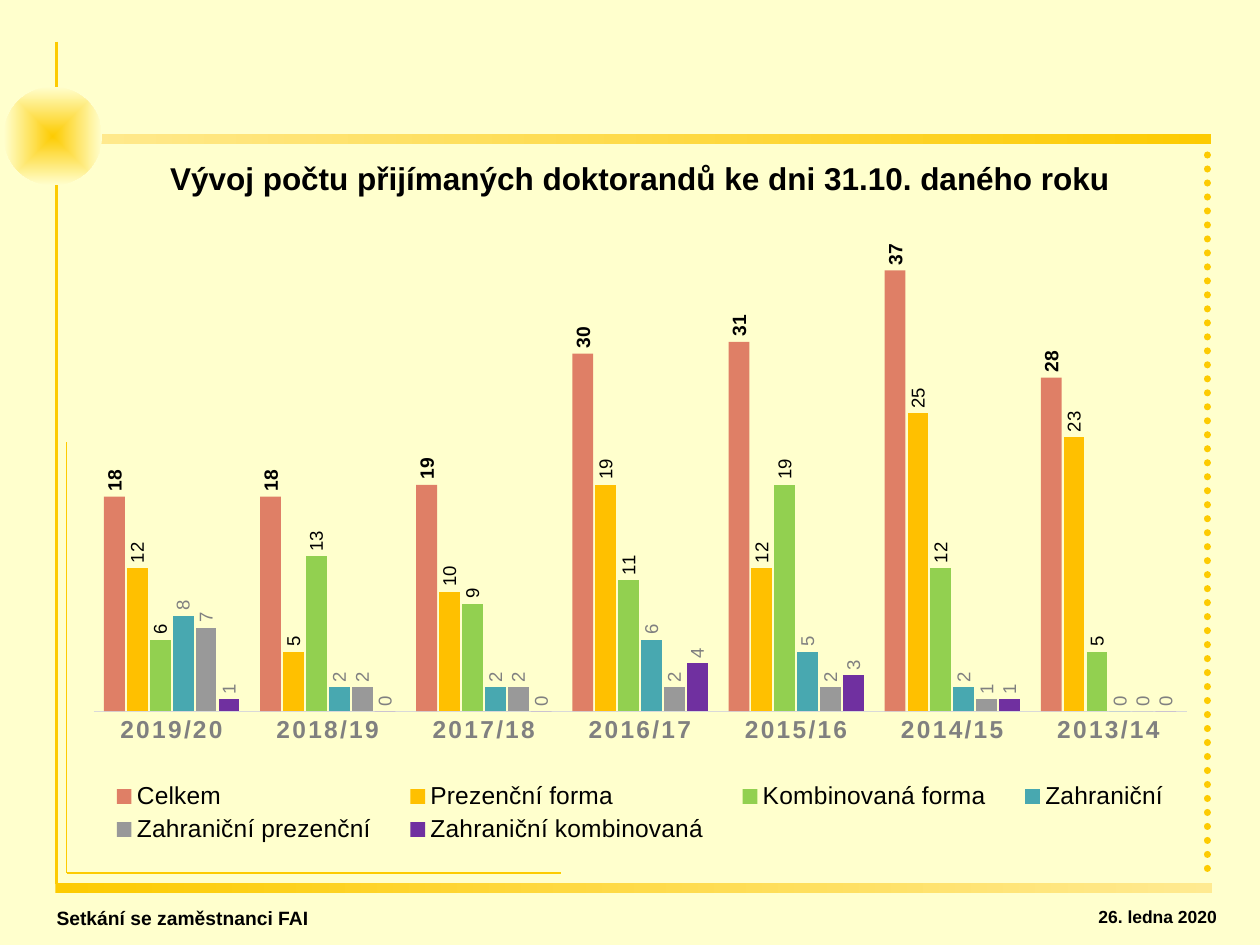
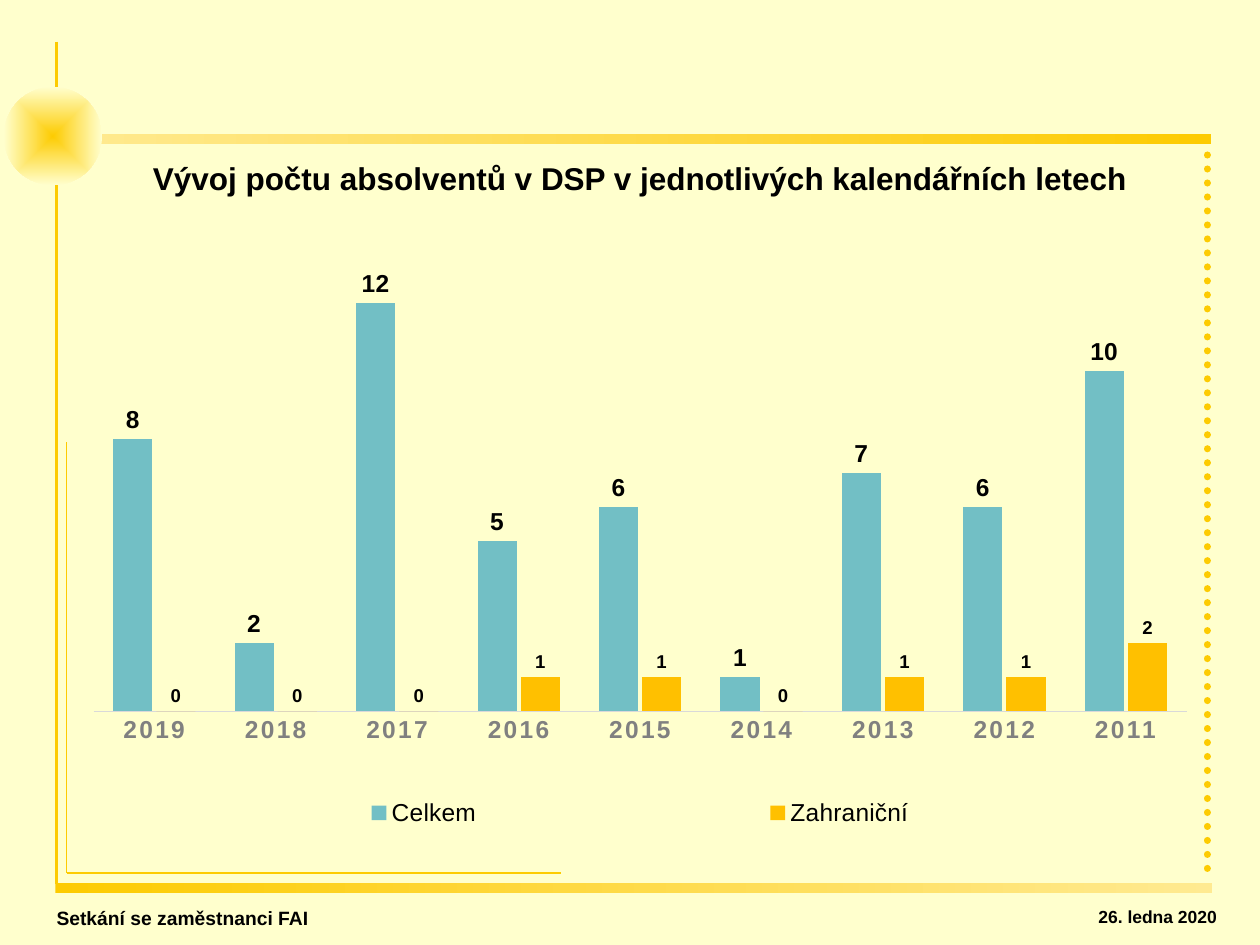
from dataclasses import dataclass

from lxml.etree import SubElement
from pptx import Presentation
from pptx.chart.data import CategoryChartData
from pptx.dml.color import RGBColor
from pptx.enum.chart import XL_CHART_TYPE, XL_LABEL_POSITION, XL_LEGEND_POSITION, XL_TICK_MARK
from pptx.enum.dml import MSO_LINE
from pptx.enum.shapes import MSO_CONNECTOR, MSO_SHAPE
from pptx.enum.text import MSO_ANCHOR, PP_ALIGN
from pptx.oxml import parse_xml
from pptx.oxml.ns import nsdecls, qn
from pptx.util import Inches, Pt


@dataclass(frozen=True)
class Theme:
    font: str = "Arial"
    background: str = "FFFFCD"
    gold: str = "FDCB01"
    pale_gold: str = "FFEA91"
    text: str = "000000"
    muted: str = "808080"
    axis: str = "D9D9D9"
    red: str = "C00000"
    amber: str = "FFC000"
    green: str = "92D050"
    teal: str = "48A8B0"
    light_teal: str = "72BFC5"
    gray: str = "999999"
    purple: str = "7030A0"
    title_size: float = 18
    chart_size: float = 14
    total_label_size: float = 11
    label_size: float = 10.6
    footer_size: float = 11
    date_size: float = 10


THEME = Theme()


@dataclass(frozen=True)
class Series:
    name: str
    values: tuple
    color: str
    opacity: int = 100
    label_size: float = THEME.label_size
    label_color: str = THEME.text
    label_bold: bool = False


def rgb(color):
    return RGBColor.from_string(color)


def format_font(font, size, color=THEME.text, bold=False):
    font.name = THEME.font
    font.size = Pt(size)
    font.bold = bold
    font.color.rgb = rgb(color)


def write_text(shape, text, size, color=THEME.text, bold=True,
               align=PP_ALIGN.LEFT, anchor=MSO_ANCHOR.TOP):
    frame = shape.text_frame
    frame.word_wrap = True
    frame.vertical_anchor = anchor
    frame.text = text
    paragraph = frame.paragraphs[0]
    paragraph.alignment = align
    format_font(paragraph.runs[0].font, size, color, bold)


def add_text(slide, text, left, top, width, height, **text_format):
    box = slide.shapes.add_textbox(Inches(left), Inches(top), Inches(width), Inches(height))
    write_text(box, text, **text_format)


def add_title(slide, text):
    title = slide.shapes.title
    title.left, title.top = Inches(0.59), Inches(1.21)
    title.width, title.height = Inches(8.98), Inches(0.4)
    write_text(title, text, THEME.title_size, align=PP_ALIGN.CENTER, anchor=MSO_ANCHOR.MIDDLE)


def add_gradient_shape(slide, kind, left, top, width, height, start, end, from_center=False):
    shape = slide.shapes.add_shape(kind, Inches(left), Inches(top), Inches(width), Inches(height))
    shape.shadow.inherit = False
    shape.line.fill.background()
    shape.fill.gradient()
    shape.fill.gradient_angle = 0
    for stop, color in zip(shape.fill.gradient_stops, (start, end)):
        stop.color.rgb = rgb(color)
    if from_center:
        linear = shape.element.spPr.find(f".//{qn('a:lin')}")
        path = parse_xml(
            f'<a:path {nsdecls("a")} path="shape">'
            '<a:fillToRect l="50000" t="50000" r="50000" b="50000"/></a:path>'
        )
        linear.getparent().replace(linear, path)


def add_line(slide, x1, y1, x2, y2, width, dotted=False):
    line = slide.shapes.add_connector(
        MSO_CONNECTOR.STRAIGHT, Inches(x1), Inches(y1), Inches(x2), Inches(y2)
    )
    line.line.color.rgb = rgb(THEME.gold)
    line.line.width = Pt(width)
    properties = line.element.spPr
    if dotted:
        line.line.dash_style = MSO_LINE.ROUND_DOT
        properties.find(qn("a:ln")).set("cap", "rnd")
    SubElement(properties, qn("a:effectLst"))


def add_frame(slide):
    """Draw the gold bands, lines and star, and the footer, that every slide has."""
    add_gradient_shape(slide, MSO_SHAPE.RECTANGLE, 0.44, 7.01, 9.18, 0.08,
                       THEME.gold, THEME.pale_gold)
    add_gradient_shape(slide, MSO_SHAPE.RECTANGLE, 0.48, 1.06, 9.13, 0.08,
                       THEME.pale_gold, THEME.gold)
    add_line(slide, 0.45, 0.33, 0.45, 7.02, 1.5)
    add_line(slide, 9.58, 1.23, 9.58, 6.94, 4, dotted=True)
    add_gradient_shape(slide, MSO_SHAPE.FLOWCHART_SUMMING_JUNCTION, 0.03, 0.69, 0.78, 0.78,
                       THEME.gold, THEME.background, from_center=True)
    add_line(slide, 0.53, 3.51, 0.53, 6.93, 0.75)
    add_line(slide, 0.53, 6.93, 4.45, 6.93, 1)
    add_text(slide, "Setkání se zaměstnanci FAI", 0.35, 7.14, 4.49, 0.24,
             size=THEME.footer_size)
    add_text(slide, "26. ledna 2020", 8.62, 7.14, 1.26, 0.24, size=THEME.date_size)


def set_layout(element, index, x, y, width, height, inner=False):
    """Place a chart part by fractions of the chart, as child number index."""
    for old_layout in element.findall(qn("c:layout")):
        element.remove(old_layout)
    target = '<c:layoutTarget val="inner"/>' if inner else ""
    element.insert(index, parse_xml(
        f'<c:layout {nsdecls("c")}><c:manualLayout>{target}'
        '<c:xMode val="edge"/><c:yMode val="edge"/>'
        f'<c:x val="{x}"/><c:y val="{y}"/><c:w val="{width}"/><c:h val="{height}"/>'
        '</c:manualLayout></c:layout>'
    ))


def format_axes(chart, maximum):
    value_axis = chart.value_axis
    value_axis.minimum_scale, value_axis.maximum_scale = 0, maximum
    value_axis.has_major_gridlines = False
    value_axis.visible = False
    category_axis = chart.category_axis
    category_axis.major_tick_mark = category_axis.minor_tick_mark = XL_TICK_MARK.NONE
    category_axis.format.line.color.rgb = rgb(THEME.axis)
    category_axis.format.line.width = Pt(0.75)
    font = category_axis.tick_labels.font
    format_font(font, THEME.chart_size, THEME.muted, bold=True)
    category_axis._element.find(f".//{qn('a:defRPr')}").set("spc", "120")


def format_series(chart_series, series, rotated_labels):
    fill = chart_series.format.fill
    fill.solid()
    fill.fore_color.rgb = rgb(series.color)
    chart_series.invert_if_negative = False
    if series.opacity < 100:
        color = chart_series._element.find(f".//{qn('a:srgbClr')}")
        SubElement(color, qn("a:alpha")).set("val", str(series.opacity * 1000))
    labels = chart_series.data_labels
    labels.show_value = True
    labels.position = XL_LABEL_POSITION.OUTSIDE_END
    format_font(labels.font, series.label_size, series.label_color, series.label_bold)
    if rotated_labels:
        body = labels._element.find(f".//{qn('a:bodyPr')}")
        body.set("rot", "-5400000")
        body.set("vert", "horz")


def add_column_chart(slide, categories, series_list, maximum, rotated_labels=False):
    data = CategoryChartData()
    data.categories = categories
    for series in series_list:
        data.add_series(series.name, series.values)
    chart = slide.shapes.add_chart(
        XL_CHART_TYPE.COLUMN_CLUSTERED, Inches(0.59), Inches(1.53), Inches(8.98), Inches(5.29), data
    ).chart
    chart.has_title = False
    format_font(chart.font, 10)
    format_axes(chart, maximum)
    plot = chart.plots[0]
    plot.vary_by_categories = False
    plot.gap_width, plot.overlap = 100, -10
    for chart_series, series in zip(plot.series, series_list):
        format_series(chart_series, series, rotated_labels)
    chart.has_legend = True
    legend = chart.legend
    legend.position = XL_LEGEND_POSITION.BOTTOM
    legend.include_in_layout = False
    format_font(legend.font, THEME.chart_size)
    set_layout(legend._element, 1, 0.01, 0.877, 0.98, 0.107)
    plot_area = chart._chartSpace.find(f".//{qn('c:plotArea')}")
    set_layout(plot_area, 0, 0.017, 0.063, 0.966, 0.715, inner=True)


def add_chart_slide(presentation, title, categories, series_list, maximum, rotated_labels=False):
    slide = presentation.slides.add_slide(presentation.slide_layouts.get_by_name("Title Only"))
    add_frame(slide)
    add_column_chart(slide, categories, series_list, maximum, rotated_labels)
    add_title(slide, title)


def main():
    presentation = Presentation()
    presentation.slide_width, presentation.slide_height = Inches(10), Inches(7.5)
    background = presentation.slide_master.background.fill
    background.solid()
    background.fore_color.rgb = rgb(THEME.background)

    add_chart_slide(
        presentation,
        "Vývoj počtu přijímaných doktorandů ke dni 31.10. daného roku",
        [f"{year}/{year % 100 + 1}" for year in range(2019, 2012, -1)],
        [
            Series("Celkem", (18, 18, 19, 30, 31, 37, 28), THEME.red, opacity=50,
                   label_size=THEME.total_label_size, label_bold=True),
            Series("Prezenční forma", (12, 5, 10, 19, 12, 25, 23), THEME.amber),
            Series("Kombinovaná forma", (6, 13, 9, 11, 19, 12, 5), THEME.green),
            Series("Zahraniční", (8, 2, 2, 6, 5, 2, 0), THEME.teal, label_color=THEME.muted),
            Series("Zahraniční prezenční", (7, 2, 2, 2, 2, 1, 0), THEME.gray,
                   label_color=THEME.muted),
            Series("Zahraniční kombinovaná", (1, 0, 0, 4, 3, 1, 0), THEME.purple,
                   label_color=THEME.muted),
        ],
        maximum=40,
        rotated_labels=True,
    )
    add_chart_slide(
        presentation,
        "Vývoj počtu absolventů v DSP v jednotlivých kalendářních letech",
        [str(year) for year in range(2019, 2010, -1)],
        [
            Series("Celkem", (8, 2, 12, 5, 6, 1, 7, 6, 10), THEME.light_teal,
                   label_size=THEME.chart_size, label_bold=True),
            Series("Zahraniční", (0, 0, 0, 1, 1, 0, 1, 1, 2), THEME.amber, label_bold=True),
        ],
        maximum=14,
    )
    presentation.save("out.pptx")


if __name__ == "__main__":
    main()
